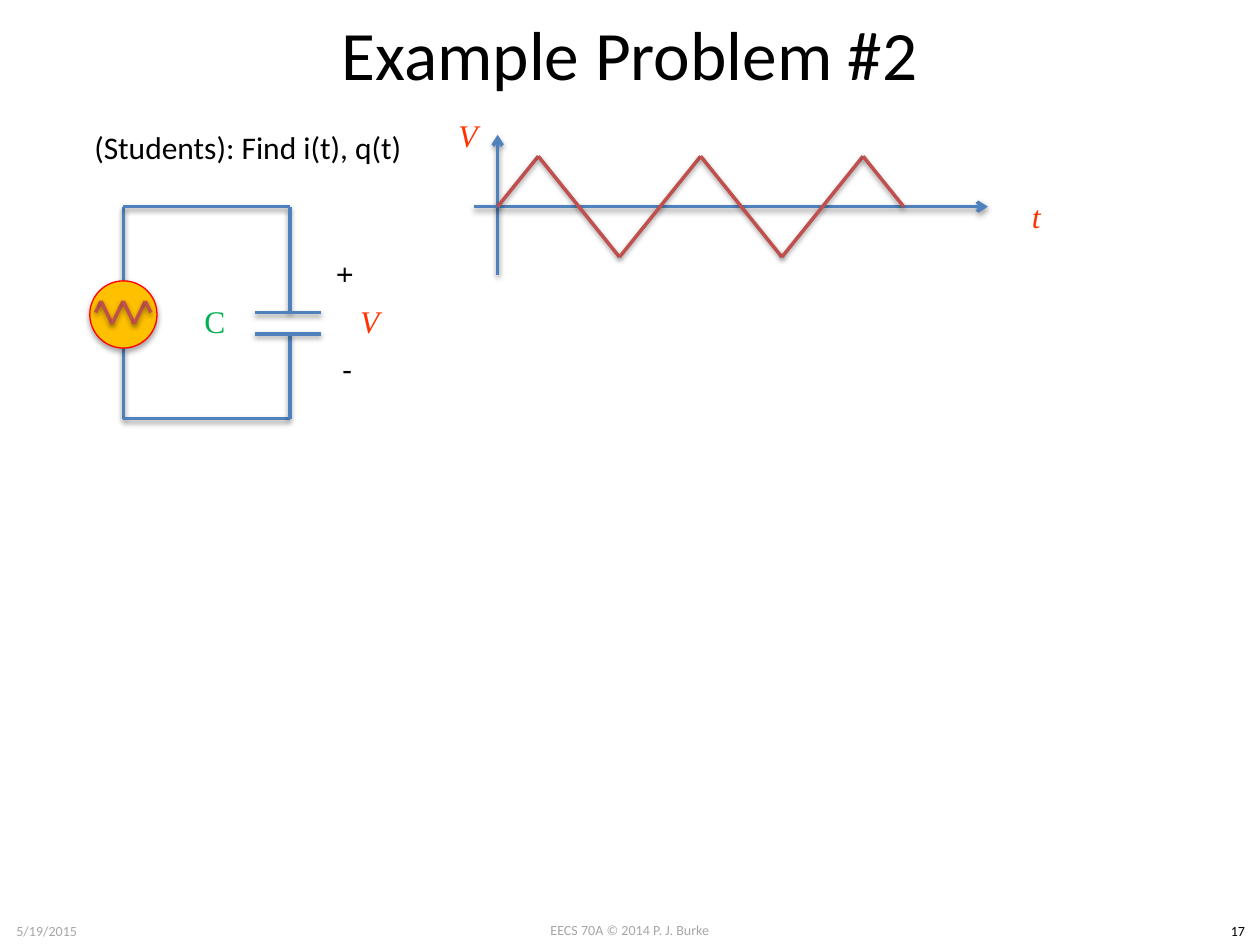
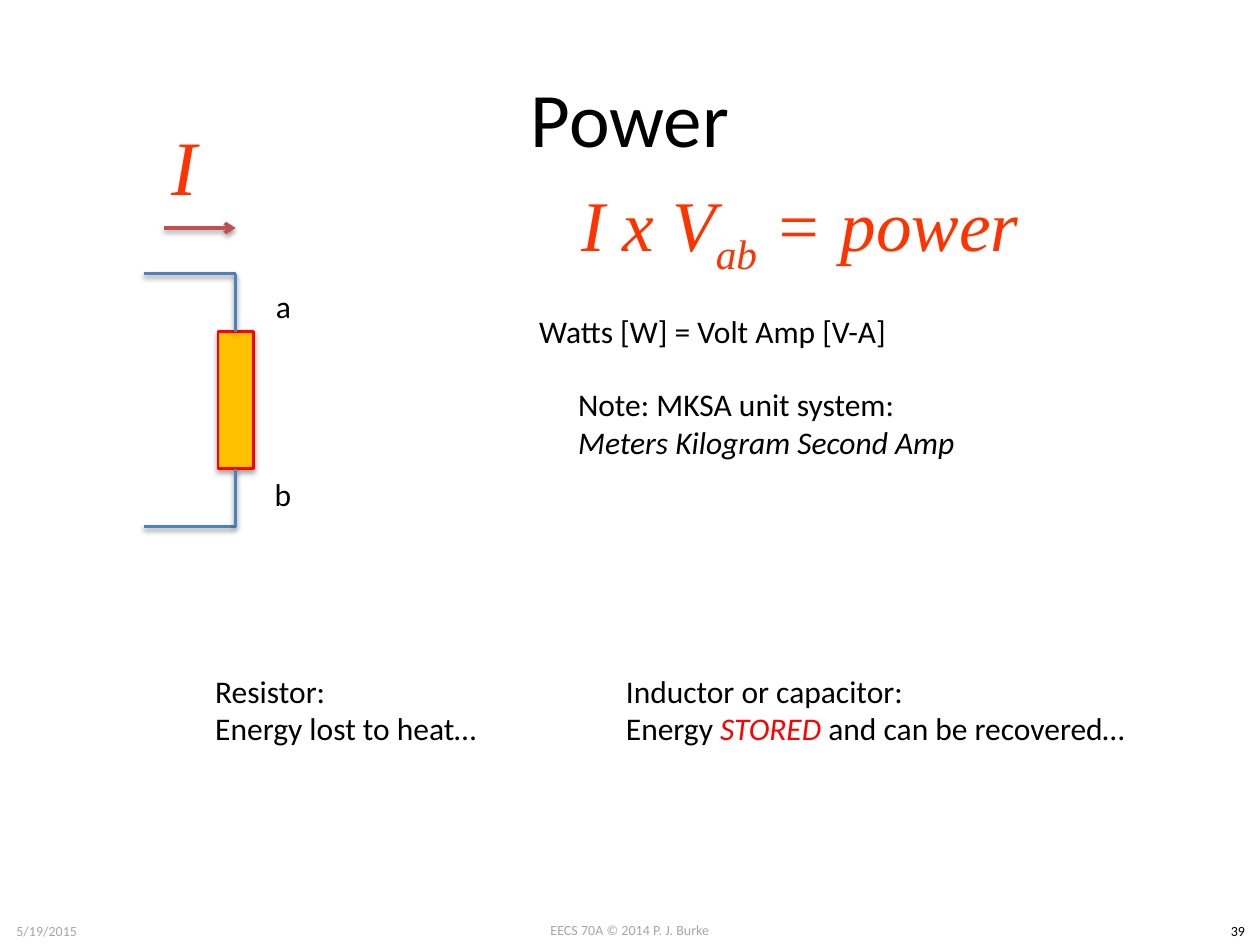
from lxml.etree import SubElement
from pptx import Presentation
from pptx.dml.color import RGBColor
from pptx.enum.shapes import MSO_CONNECTOR as CONN, MSO_SHAPE as SHAPE, MSO_SHAPE_TYPE as KIND
from pptx.enum.text import MSO_ANCHOR as ANCHOR, MSO_AUTO_SIZE as AUTO, PP_ALIGN as ALIGN
from pptx.oxml.ns import qn
from pptx.util import Pt

rgb = RGBColor.from_string
BLUE, BRICK, AMBER, RED = "4F81BD", "C0504D", "FFC000", "FF0000"
BODY = dict(name="Calibri", size=Pt(18), color="000000")
FOOT = dict(BODY, size=Pt(8), color="A6A6A6")
MATH = dict(BODY, name="Times New Roman", color="FF3300", italic=True)


def text(sp, box, paras, font, centred=False, wrap=True):
    """Place a text shape; each paragraph is a list of (text, format changes)."""
    sp.left, sp.top, sp.width, sp.height = [Pt(v) for v in box]
    tf = sp.text_frame
    tf.auto_size, tf.word_wrap = AUTO.NONE, wrap
    tf.vertical_anchor = ANCHOR.MIDDLE if centred else ANCHOR.TOP
    for i, runs in enumerate(paras):
        p = tf.add_paragraph() if i else tf.paragraphs[0]
        p.alignment = ALIGN.CENTER if centred else ALIGN.LEFT
        for words, changes in runs:
            r = p.add_run()
            r.text = words
            for key, value in {**font, **changes}.items():
                if key == "color":
                    r.font.color.rgb = rgb(value)
                elif key == "baseline":
                    r._r.get_or_add_rPr().set("baseline", value)
                else:
                    setattr(r.font, key, value)
    return sp


def line(s, x1, y1, x2, y2, color=BLUE, arrow=False):
    c = s.shapes.add_connector(CONN.STRAIGHT, Pt(x1), Pt(y1), Pt(x2), Pt(y2))
    c.line.color.rgb, c.line.width = rgb(color), Pt(2)
    if arrow:
        SubElement(c.line._get_or_add_ln(), qn("a:tailEnd"), type="arrow")
    return c


prs = Presentation()
prs.slide_width, prs.slide_height = Pt(720), Pt(540)

# Shared title and footer
slides = []
for title, size, top, height, number in [("Example Problem #2", 39.6, 0, 60, "17"),
                                         ("Power", 44, 21.6, 90, "39")]:
    s = prs.slides.add_slide(prs.slide_layouts[5])
    text(s.shapes.title, (36, top, 648, height), [[(title, {})]], dict(BODY, size=Pt(size)), True)
    for words, x, y, w, color in [("EECS 70A © 2014 P. J. Burke", 276, 522.7, 168, "A6A6A6"),
                                  ("5/19/2015", 0, 523.4, 53.5, "A6A6A6"),
                                  (number, 694.8, 523.4, 25.2, "000000")]:
        text(s.shapes.add_textbox(0, 0, 0, 0), (x, y, w, 17), [[(words, {})]],
             dict(FOOT, color=color), True)
    slides.append(s)
problem, power = slides

# Slide 1: circuit with source on the left and capacitor on the right
left, right, top, bottom = 70.5, 165.6, 118.1, 239.2
plate_top, plate_bottom = 178.6, 190.8
source_top, source_size = 160.5, 38.4
for wire in [(left, source_top, left, top),
             (left, source_top + source_size, left, bottom),
             (left, top, right, top),
             (left, bottom, right, bottom),
             (right, top, right, plate_top),
             (right, plate_bottom, right, bottom),
             (right - 20, plate_top, right + 18, plate_top),
             (right - 20, plate_bottom, right + 18, plate_bottom)]:
    line(problem, *wire)
source = problem.shapes.add_shape(SHAPE.OVAL, Pt(left - source_size / 2), Pt(source_top),
                                  Pt(source_size), Pt(source_size))

# Slide 1: axes of V against t
line(problem, 284.4, 157, 284.4, 77, arrow=True)
line(problem, 270.7, top, 564.5, top, arrow=True)

# Slide 1: triangle waves, in the source and on the axes
for x0, quarter, mid, height in [(54.6, 3.16, 178.6, 6.5), (284.4, 23.2, top, 28.8)]:
    peaks = [(x0 + quarter * (2 * i + 1), mid - height * (-1) ** i) for i in range(5)]
    points = [(x0, mid), *peaks, (x0 + 10 * quarter, mid)]
    for start, end in zip(points, points[1:]):
        line(problem, *start, *end, color=BRICK)

# Slide 1: labels
for words, box, font, centred in [
        ("(Students): Find i(t), q(t)", (46.8, 69.8, 192.2, 29), BODY, False),
        ("-", (188.6, 196.6, 20.2, 29), BODY, False),
        ("C", (79.9, 157, 85.7, 52.6), dict(MATH, color="00B050", italic=False), True),
        ("V", (183.6, 161.3, 55.4, 44), MATH, True),
        ("V", (239.8, 55.4, 55.4, 44), MATH, True),
        ("t", (564.5, 101.5, 55.4, 44), MATH, True)]:
    text(problem.shapes.add_textbox(0, 0, 0, 0), box, [[(words, {})]], font, centred, centred)
plus = text(problem.shapes.add_textbox(0, 0, 0, 0), (186.5, 143.3, 23.8, 29),
            [[("+", {})]], BODY, wrap=False)
plus.rotation = 90

# Slide 2: resistor between terminals a and b
x_end, y_a, y_b = 134.7, 156.4, 301
resistor = power.shapes.add_shape(SHAPE.RECTANGLE, Pt(x_end - 10.2), Pt(189.5), Pt(20.4), Pt(78.4))
for y, site in [(y_a, 0), (y_b, 2)]:
    line(power, 82.2, y, x_end, y)
    line(power, x_end, y, x_end, y).end_connect(resistor, site)
line(power, 93.6, 130.3, x_end, 130.3, BRICK, arrow=True)

# Slide 2: formula and notes
for paras, box, font, centred in [
        ([[("I", {})]], (60.5, 57.6, 90, 72.7), dict(MATH, size=Pt(44)), True),
        ([[("I x V", {}), ("ab", {"baseline": "-25000"}), (" = power", {})]],
         (323.3, 94.3, 267.8, 72.7), dict(MATH, size=Pt(40.7)), True),
        ([[("a", {})]], (150.5, 160.6, 23, 29), BODY, False),
        ([[("b", {})]], (149.8, 267.8, 24.5, 29), BODY, False),
        ([[("Watts [W] = Volt Amp [V-A]", {})]], (301, 175, 216, 29), BODY, False),
        ([[("Note: MKSA unit system:", {})],
          [("Meters Kilogram Second Amp", {"italic": True})]],
         (323.3, 216.7, 233.3, 51), BODY, False),
        ([[("Resistor:", {})], [("Energy lost to heat…", {})]],
         (115.9, 380.2, 166.3, 51), BODY, False),
        ([[("Inductor or capacitor:", {})],
          [("Energy ", {}), ("STORED", {"color": RED, "italic": True}),
           (" and can be recovered…", {})]],
         (350.6, 380.2, 304.6, 51), BODY, False)]:
    text(power.shapes.add_textbox(0, 0, 0, 0), box, paras, font, centred, centred)

# Fill and outline of the two components
for sp, width in [(source, 0.75), (resistor, 1.5)]:
    sp.fill.solid()
    sp.fill.fore_color.rgb = rgb(AMBER)
    sp.line.color.rgb, sp.line.width = rgb(RED), Pt(width)

# Soft shadow under every line and component
for s in slides:
    for sp in s.shapes:
        if sp.shape_type not in (KIND.LINE, KIND.AUTO_SHAPE):
            continue
        dist, alpha = (1.6, "38000") if sp.shape_type == KIND.LINE else (1.8, "35000")
        effects = SubElement(sp._element.spPr, qn("a:effectLst"))
        shadow = SubElement(effects, qn("a:outerShdw"), blurRad=str(Pt(3.1)), dist=str(Pt(dist)),
                            dir="5400000", rotWithShape="0")
        SubElement(SubElement(shadow, qn("a:srgbClr"), val="000000"), qn("a:alpha"), val=alpha)

prs.save("out.pptx")
